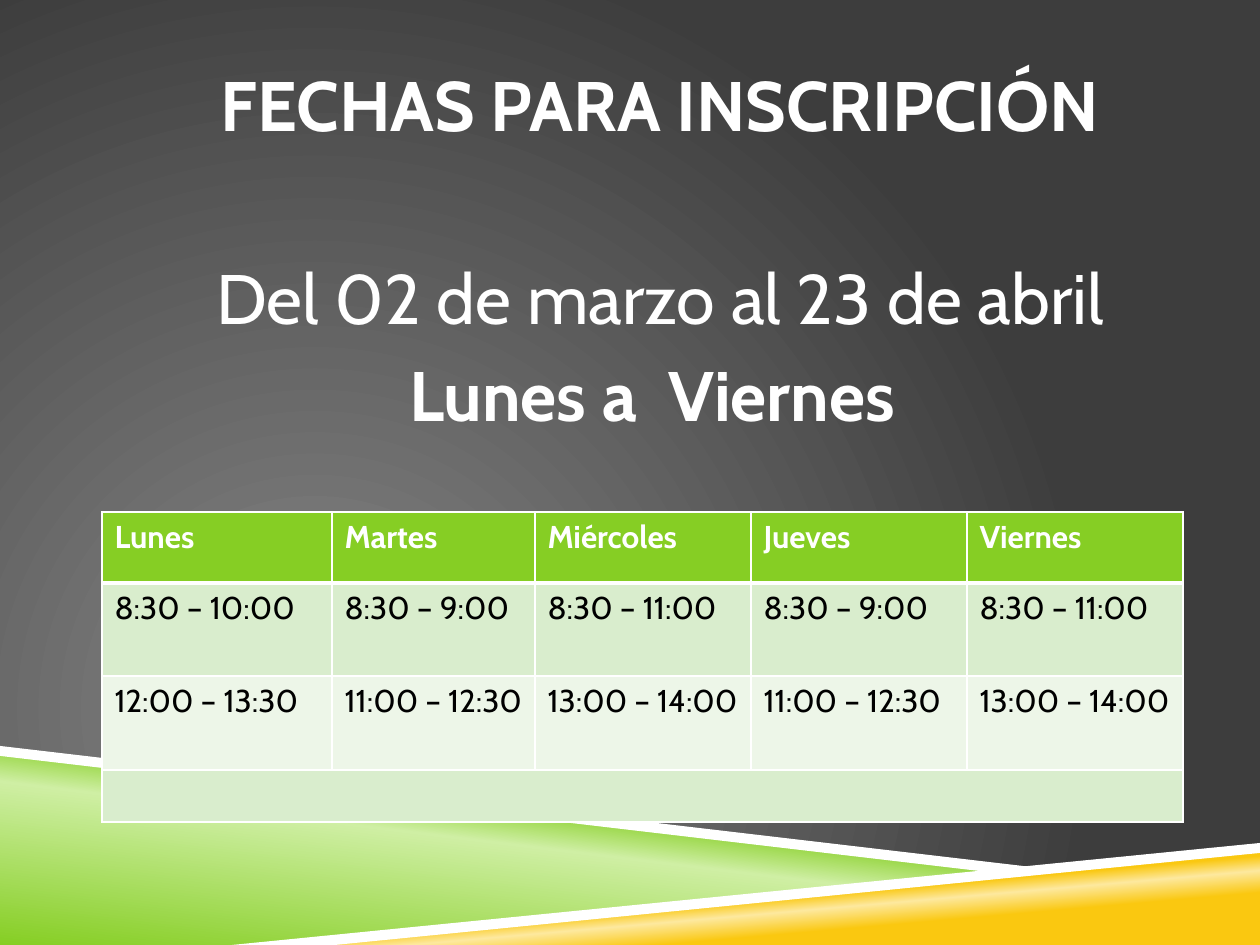
import pptx
import pptx.util
import pptx.dml.color
import pptx.enum.text
import pptx.oxml
import pptx.oxml.ns

HUE = {"white": "FFFFFF", "black": "000000", "green": "86CE24",
       "lime": "CFEFA4", "gold": "FAC810", "cream": "FDE99F",
       "gray": "878787", "dark": "3D3D3D", "mint": "D9EDCD", "pale": "EDF6E8"}
FONT = "Cabin"
TITLE = "FECHAS PARA INSCRIPCIÓN"
DATES = [("Del 02 de marzo al 23 de abril", False), ("Lunes a  Viernes ", True)]
HOURS = [
    ["Lunes", "Martes", "Miércoles", "Jueves", "Viernes"],
    ["8:30 – 10:00", "8:30 – 9:00", "8:30 – 11:00", "8:30 – 9:00", "8:30 – 11:00"],
    ["12:00 – 13:30", "11:00 – 12:30", "13:00 – 14:00", "11:00 – 12:30", "13:00 – 14:00"],
    [""] * 5,
]
COLS = [230, 203, 216, 216, 216]
ROWS = [71, 93, 94, 52]
FILLS = ["green", "mint", "pale", "mint"]
BANDS = [
    ([(0, 752), (998, 872), (252, 945), (0, 945)],
     ([(0, "green"), (52, "lime"), (66, "green")], 277)),
    ([(250, 945), (1260, 847), (1260, 945)],
     ([(28, "gold"), (40, "cream"), (48, "gold")], 265)),
    ([(0, 746), (0, 756), (996, 873), (1048, 869)], None),
    ([(1260, 843), (232, 945), (335, 945), (1260, 853)], None),
]
NS = pptx.oxml.ns.nsdecls("a")
qn = pptx.oxml.ns.qn


def px(n):
    return pptx.util.Emu(round(n * 9144000 / 1260))


def rgb(name):
    return pptx.dml.color.RGBColor.from_string(HUE[name])


def blend(host, stops, shade):
    marks = "".join(f'<a:gs pos="{pos * 1000}"><a:srgbClr val="{HUE[hue]}"/></a:gs>'
                    for pos, hue in stops)
    node = pptx.oxml.parse_xml(
        f'<a:gradFill {NS} rotWithShape="1"><a:gsLst>{marks}</a:gsLst>{shade}</a:gradFill>')
    host.replace(host.find(qn("a:solidFill")), node)


def write(para, text, size, hue, bold):
    run = para.add_run()
    run.text = text
    font = run.font
    font.name, font.size, font.bold = FONT, pptx.util.Pt(size), bold
    font.color.rgb = rgb(hue)


def setup(frame):
    frame.word_wrap = True
    frame.auto_size = pptx.enum.text.MSO_AUTO_SIZE.NONE
    frame.vertical_anchor = pptx.enum.text.MSO_ANCHOR.TOP
    frame.margin_left, frame.margin_right = px(9), 0
    frame.margin_top = frame.margin_bottom = px(6)


def line(para, text, bold, gap):
    para.alignment = pptx.enum.text.PP_ALIGN.CENTER
    para.line_spacing = 1.0
    para.space_before = pptx.util.Pt(gap)
    write(para, text, 40, "white", bold)


def edge(cell, row):
    props = cell._tc.get_or_add_tcPr()
    wide = {"L": 1, "R": 1, "T": 3 if row == 1 else 1, "B": 3 if row == 0 else 1}
    for i, (side, size) in enumerate(wide.items()):
        props.insert(i, pptx.oxml.parse_xml(
            f'<a:ln{side} {NS} w="{size * 12700}"><a:solidFill>'
            f'<a:srgbClr val="{HUE["white"]}"/></a:solidFill></a:ln{side}>'))


def main():
    deck = pptx.Presentation()
    deck.slide_width, deck.slide_height = px(1260), px(945)
    slide = deck.slides.add_slide(deck.slide_layouts[5])
    slide.background.fill.solid()
    blend(slide._element.find(".//" + qn("p:bgPr")), [(0, "gray"), (100, "dark")],
          '<a:path path="circle"><a:fillToRect l="50000" t="100000" '
          'r="100000" b="50000"/></a:path>')

    for points, tint in BANDS:
        pen = slide.shapes.build_freeform(*points[0], scale=9144000 / 1260)
        pen.add_line_segments(points[1:], close=True)
        band = pen.convert_to_shape()
        band.shadow.inherit = False
        band.fill.solid()
        band.fill.fore_color.rgb = rgb("white")
        band.line.fill.background()
        if tint:
            stops, angle = tint
            blend(band._element.spPr, stops, f'<a:lin ang="{angle * 60000}" scaled="0"/>')

    title = slide.shapes.title
    title.left, title.top, title.width, title.height = map(px, (105, 55, 1101, 97))
    setup(title.text_frame)
    line(title.text_frame.paragraphs[0], TITLE, True, 0)

    frame = slide.shapes.add_textbox(*map(px, (105, 249, 1101, 200))).text_frame
    setup(frame)
    for i, (text, bold) in enumerate(DATES):
        para = frame.add_paragraph() if i else frame.paragraphs[0]
        line(para, text, bold, 7 if i else 0)

    table = slide.shapes.add_table(
        len(ROWS), len(COLS), *map(px, (102, 512, sum(COLS), sum(ROWS)))).table
    for col, wide in zip(table.columns, COLS):
        col.width = px(wide)
    for r, (row, tall) in enumerate(zip(table.rows, ROWS)):
        row.height = px(tall)
        for cell, text in zip(row.cells, HOURS[r]):
            cell.fill.solid()
            cell.fill.fore_color.rgb = rgb(FILLS[r])
            edge(cell, r)
            if text:
                write(cell.text_frame.paragraphs[0], text, 18,
                      "black" if r else "white", r == 0)
    table.cell(3, 0).merge(table.cell(3, 4))
    deck.save("out.pptx")


if __name__ == "__main__":
    main()
